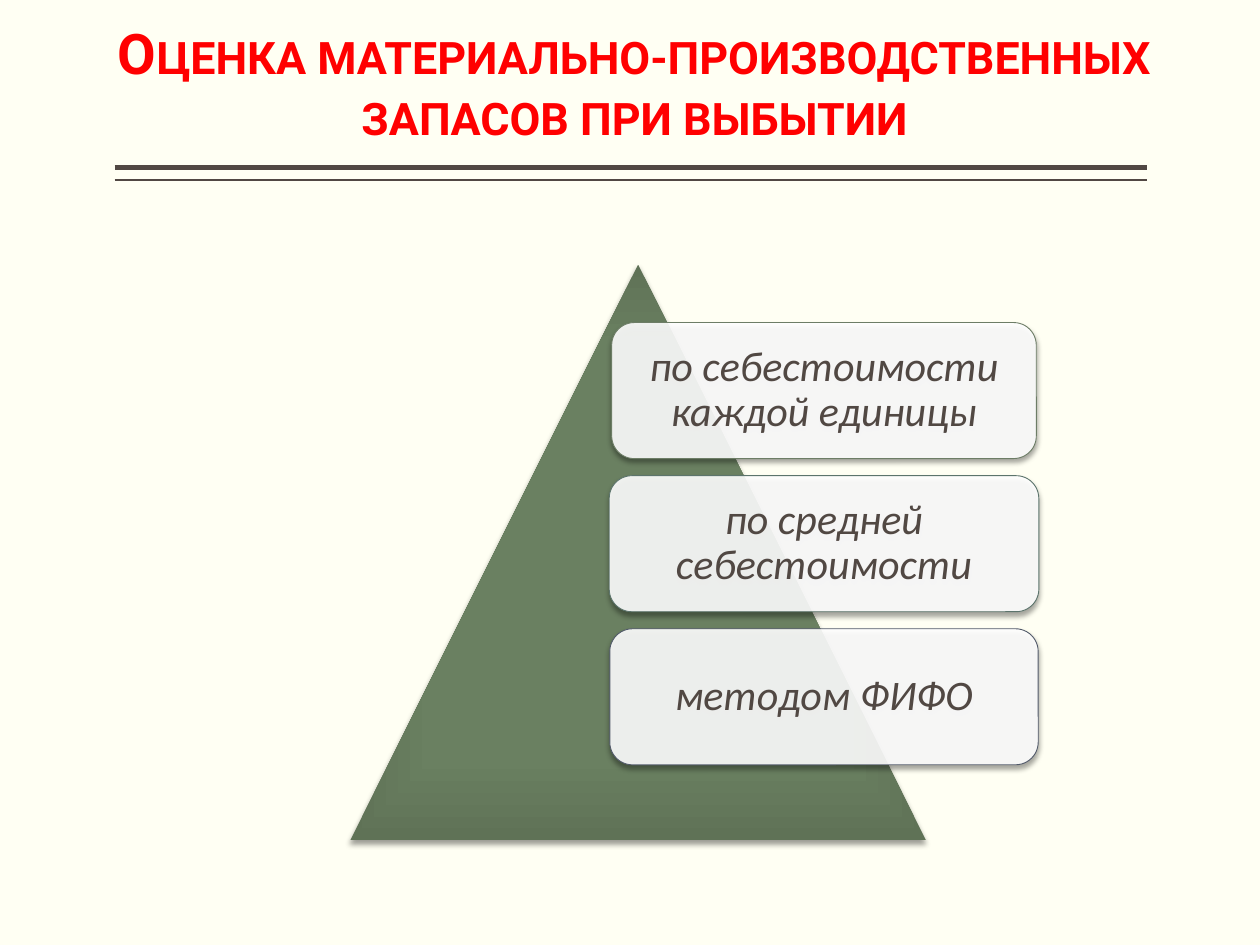
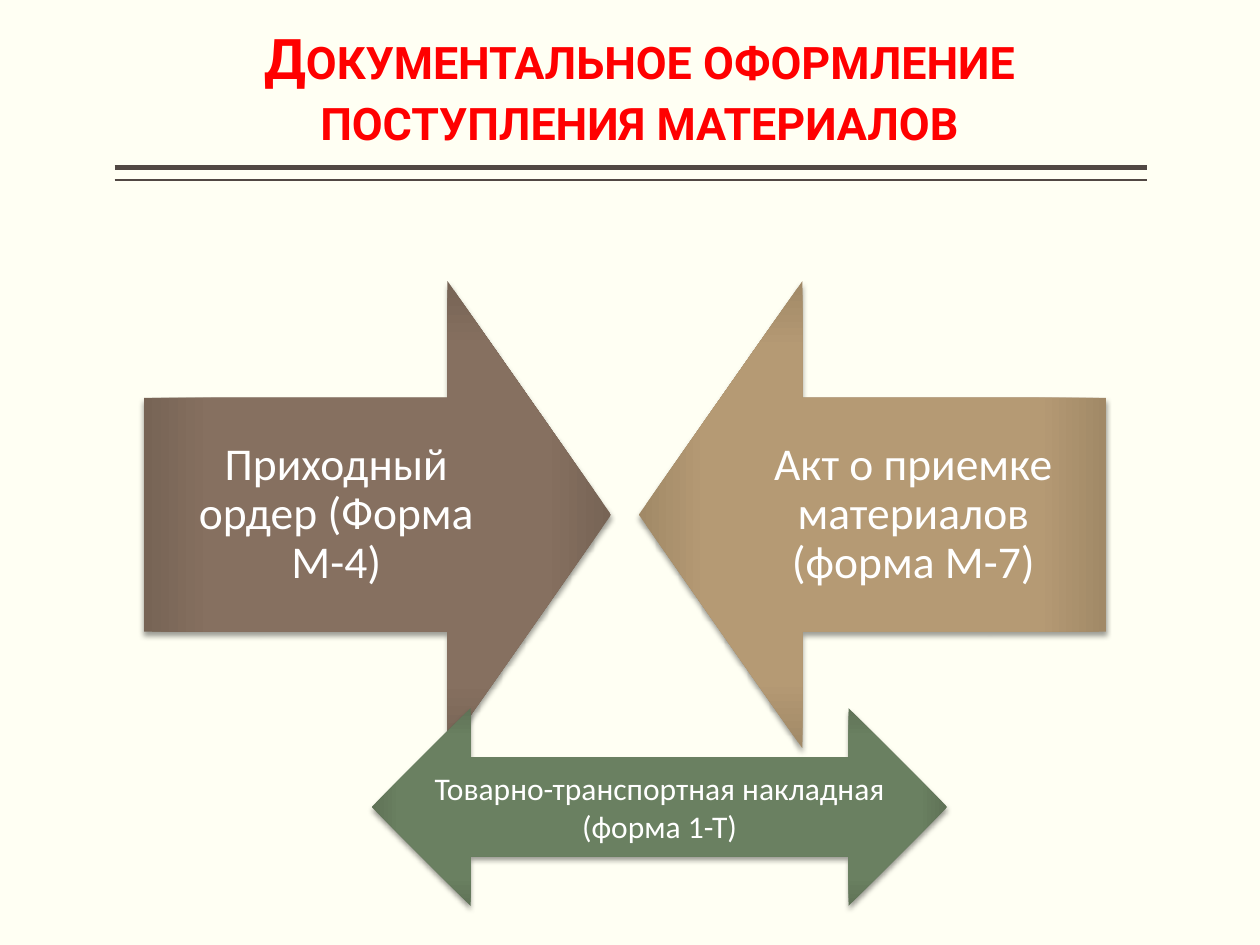
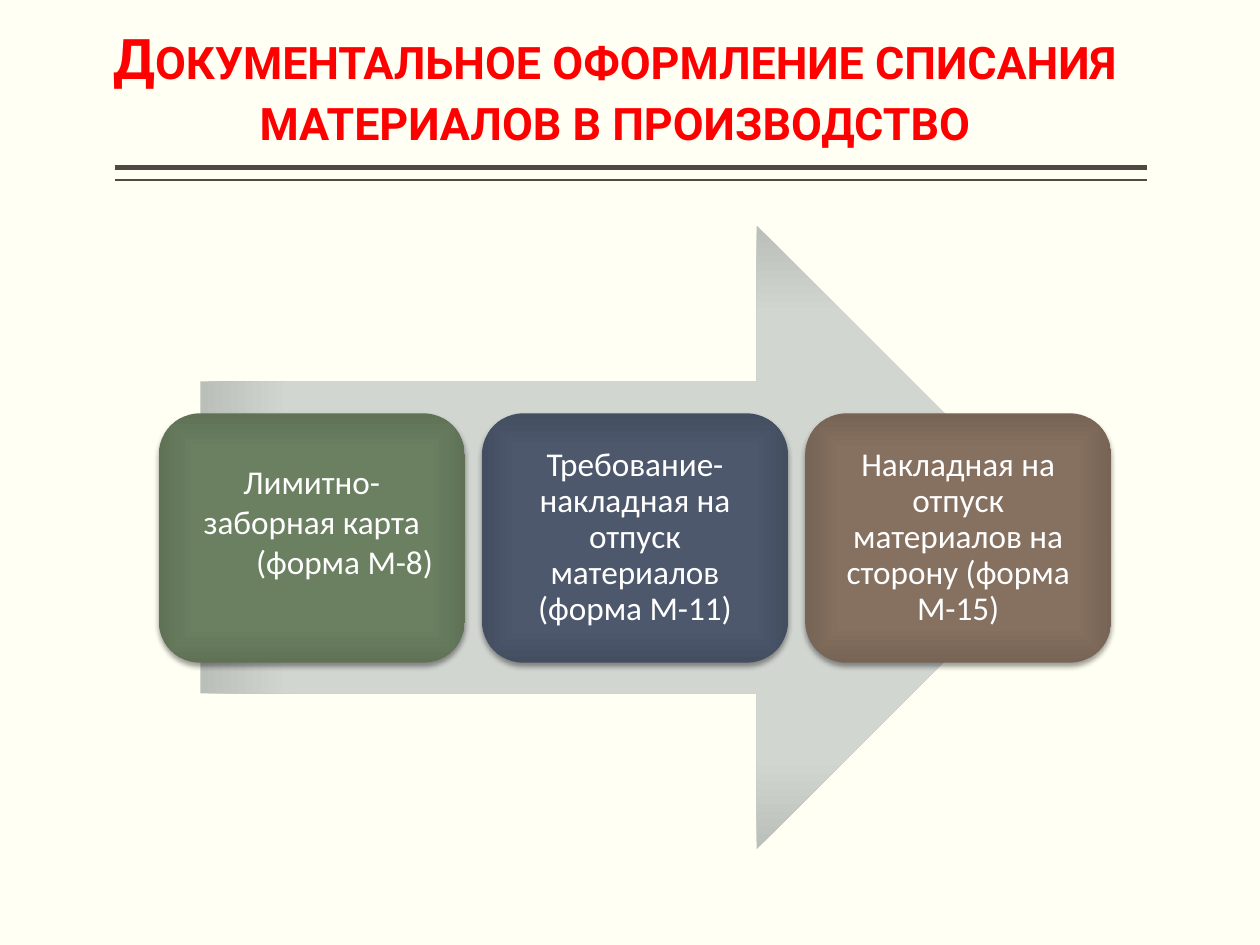
"""Build three slides on the valuation of inventories and their paperwork."""
import pptx
import pptx.util
import pptx.dml.color
import pptx.enum.shapes
import pptx.enum.text
import pptx.oxml
import pptx.oxml.ns

Inches = pptx.util.Inches
RGBColor = pptx.dml.color.RGBColor
SHAPE = pptx.enum.shapes.MSO_SHAPE
ANCHOR = pptx.enum.text.MSO_ANCHOR
CENTER = pptx.enum.text.PP_ALIGN.CENTER

CREAM = RGBColor(0xFF, 0xFF, 0xF3)
WHITE = RGBColor(0xFF, 0xFF, 0xFF)
RED = RGBColor(0xFF, 0x00, 0x00)
INK = RGBColor(0x51, 0x48, 0x43)
MOSS_LINE = RGBColor(0x6D, 0x7D, 0x66)
TEAL_LINE = RGBColor(0x5C, 0x74, 0x6C)
SLATE_LINE = RGBColor(0x52, 0x5A, 0x6A)


def gradient(*codes):
    """Return the three stops of a gradient, from the centre to the edge."""
    return [RGBColor.from_string(code) for code in codes]


GREEN = gradient("6B8162", "6A8061", "5F7256")
BROWN = gradient("877161", "867060", "776455")
TAN = gradient("B79B75", "B59A74", "A18967")
BLUE = gradient("4E596E", "4D586D", "444E61")
GREY = gradient("D4D8D2", "D2D6D1", "BBBFBA")

TITLE_FONT = {"name": "Roboto", "size": pptx.util.Pt(32), "bold": True}
BODY_FONT = {"name": "Calibri"}
NAMESPACE = pptx.oxml.ns.nsdecls("a")


def set_attributes(target, values):
    """Set each attribute of the target from a dict."""
    for name, value in values.items():
        setattr(target, name, value)


def write_text(shape, lines, color, font, inset=(0.1, 0.05), anchor=ANCHOR.MIDDLE,
               spacing=0.9):
    """Write centred paragraphs with one format into a shape."""
    frame = shape.text_frame
    horizontal, vertical = (Inches(value) for value in inset)
    set_attributes(frame, {
        "word_wrap": True, "auto_size": pptx.enum.text.MSO_AUTO_SIZE.NONE,
        "vertical_anchor": anchor, "margin_left": horizontal,
        "margin_right": horizontal, "margin_top": vertical, "margin_bottom": vertical})
    frame.text = "\n".join(lines)
    for paragraph in frame.paragraphs:
        set_attributes(paragraph, {"alignment": CENTER, "line_spacing": spacing})
        for run in paragraph.runs:
            set_attributes(run.font, font)
            run.font.color.rgb = color


def body_font(size, **extra):
    """Return the body font at a size."""
    return {**BODY_FONT, "size": pptx.util.Pt(size), **extra}


def fill_gradient(shape, colors):
    """Fill a shape with a gradient that runs from its centre to its edges."""
    shape.fill.solid()
    solid = shape.element.spPr.find(pptx.oxml.ns.qn("a:solidFill"))
    stops = "".join(
        f'<a:gs pos="{position}"><a:srgbClr val="{color}"/></a:gs>'
        for position, color in zip((0, 71000, 100000), colors))
    solid.getparent().replace(solid, pptx.oxml.parse_xml(
        f'<a:gradFill {NAMESPACE} rotWithShape="1"><a:gsLst>{stops}</a:gsLst>'
        '<a:path path="rect"><a:fillToRect l="50000" t="50000" r="50000" b="50000"/>'
        '</a:path></a:gradFill>'))


def add_figure(slide, kind, box, colors=None, shadow=True):
    """Add a preset shape without outline, with a gradient and a soft shadow."""
    shape = slide.shapes.add_shape(kind, *(Inches(value) for value in box))
    shape.shadow.inherit = False
    shape.line.fill.background()
    if colors:
        fill_gradient(shape, colors)
    if shadow:
        effects = shape.element.spPr.find(pptx.oxml.ns.qn("a:effectLst"))
        effects.append(pptx.oxml.parse_xml(
            f'<a:outerShdw {NAMESPACE} blurRad="39370" dist="25400" dir="5400000" '
            'rotWithShape="0"><a:srgbClr val="000000"><a:alpha val="38000"/>'
            '</a:srgbClr></a:outerShdw>'))
    return shape


def add_rule(slide, top, width):
    """Add one horizontal line under the title."""
    rule = slide.shapes.add_connector(
        pptx.enum.shapes.MSO_CONNECTOR.STRAIGHT,
        Inches(0.91), Inches(top), Inches(9.1), Inches(top))
    rule.line.color.rgb = INK
    rule.line.width = pptx.util.Pt(width)
    rule.element.spPr.append(pptx.oxml.parse_xml(f"<a:effectLst {NAMESPACE}/>"))


def add_titled_slide(presentation, title, box):
    """Add a slide with a small-caps title and the double rule."""
    slide = presentation.slides.add_slide(presentation.slide_layouts[5])
    shape = slide.shapes.title
    set_attributes(shape, dict(zip(
        ("left", "top", "width", "height"), (Inches(value) for value in box))))
    write_text(shape, [title], RED, TITLE_FONT, (0, 0.05), ANCHOR.BOTTOM)
    for run in shape.text_frame.paragraphs[0].runs:
        run.font.element.set("cap", "small") if hasattr(run.font, "element") else \
            run._r.get_or_add_rPr().set("cap", "small")
    add_rule(slide, 1.33, 3)
    add_rule(slide, 1.43, 1)
    return slide


def add_method(slide, text, top, width, line_color):
    """Add one translucent card that names a valuation method."""
    card = add_figure(slide, SHAPE.ROUNDED_RECTANGLE,
                      (6.54 - width / 2, top, width, 1.08))
    card.fill.solid()
    card.fill.fore_color.rgb = WHITE
    color = card.element.spPr.find(pptx.oxml.ns.qn("a:solidFill"))[0]
    color.append(pptx.oxml.parse_xml(f'<a:alpha {NAMESPACE} val="90000"/>'))
    card.line.color.rgb = line_color
    card.line.width = pptx.util.Pt(0.5)
    write_text(card, [text], INK, body_font(24, italic=True), (0.1, 0.1))


def add_receipt_arrow(slide, text, left, text_left, rotation, colors):
    """Add one big inward arrow and its upright caption."""
    arrow = add_figure(slide, SHAPE.DOWN_ARROW, (left, 2.23, 3.71, 3.71), colors)
    arrow.rotation = rotation
    arrow.adjustments[0] = 0.5
    arrow.adjustments[1] = 0.35
    caption = slide.shapes.add_textbox(
        Inches(text_left), Inches(3.16), Inches(3.06), Inches(1.85))
    write_text(caption, [text], WHITE, body_font(26), (0.2, 0.2))


def add_document(slide, lines, left, colors, spacing=0.9):
    """Add one card that names a write-off document."""
    card = add_figure(slide, SHAPE.ROUNDED_RECTANGLE, (left, 3.28, 2.43, 1.98), colors)
    write_text(card, lines, WHITE, body_font(19), (0.08, 0.08), spacing=spacing)
    return card


def build_valuation(presentation):
    """Build the slide on valuation methods."""
    slide = add_titled_slide(
        presentation, "Оценка материально-производственных запасов при выбытии",
        (0.35, 0.21, 9.37, 1.01))
    add_figure(slide, SHAPE.ISOSCELES_TRIANGLE, (2.78, 2.1, 4.57, 4.57), GREEN)
    methods = [("по себестоимости каждой единицы", 3.37, MOSS_LINE),
               ("по средней себестоимости", 3.41, TEAL_LINE),
               ("методом ФИФО", 3.4, SLATE_LINE)]
    for index, (text, width, line_color) in enumerate(methods):
        add_method(slide, text, 2.56 + 1.215 * index, width, line_color)


def build_receipt(presentation):
    """Build the slide on receipt documents."""
    slide = add_titled_slide(
        presentation, "Документальное оформление поступления материалов",
        (1.13, 0.01, 7.89, 1.25))
    add_receipt_arrow(slide, "Приходный ордер (Форма М-4)", 1.14, 1.14, 270, BROWN)
    add_receipt_arrow(slide, "Акт о приемке материалов (форма М-7)", 5.07, 5.72, 90, TAN)
    waybill = add_figure(slide, SHAPE.LEFT_RIGHT_ARROW, (2.95, 5.62, 4.57, 1.57), GREEN)
    write_text(waybill, ["Товарно-транспортная накладная (форма 1-Т)"], WHITE,
               body_font(18), spacing=1.0)


def build_write_off(presentation):
    """Build the slide on write-off documents."""
    slide = add_titled_slide(
        presentation, "Документальное оформление списания материалов в производство",
        (0.43, 0.01, 8.9, 1.25))
    add_figure(slide, SHAPE.RIGHT_ARROW, (1.59, 1.79, 6.89, 4.95), GREY, shadow=False)
    lefts = [1.26 + 2.565 * index for index in range(3)]
    limit_card = add_document(
        slide, ["Лимитно-заборная карта", "(форма М-8)"], lefts[0], GREEN, 1.0)
    limit_card.text_frame.margin_bottom = Inches(0.35)
    form_line = limit_card.text_frame.paragraphs[1]
    form_line._p.get_or_add_pPr().set("marL", str(Inches(0.52)))
    add_document(slide, ["Требование-накладная на отпуск материалов (форма М-11)"],
                 lefts[1], BLUE)
    add_document(slide, ["Накладная на отпуск материалов на сторону (форма М-15)"],
                 lefts[2], BROWN)


def main():
    """Build and save the presentation."""
    presentation = pptx.Presentation()
    presentation.slide_width = Inches(10)
    presentation.slide_height = Inches(7.5)
    background = presentation.slide_master.background.fill
    background.solid()
    background.fore_color.rgb = CREAM
    build_valuation(presentation)
    build_receipt(presentation)
    build_write_off(presentation)
    presentation.save("out.pptx")


if __name__ == "__main__":
    main()
